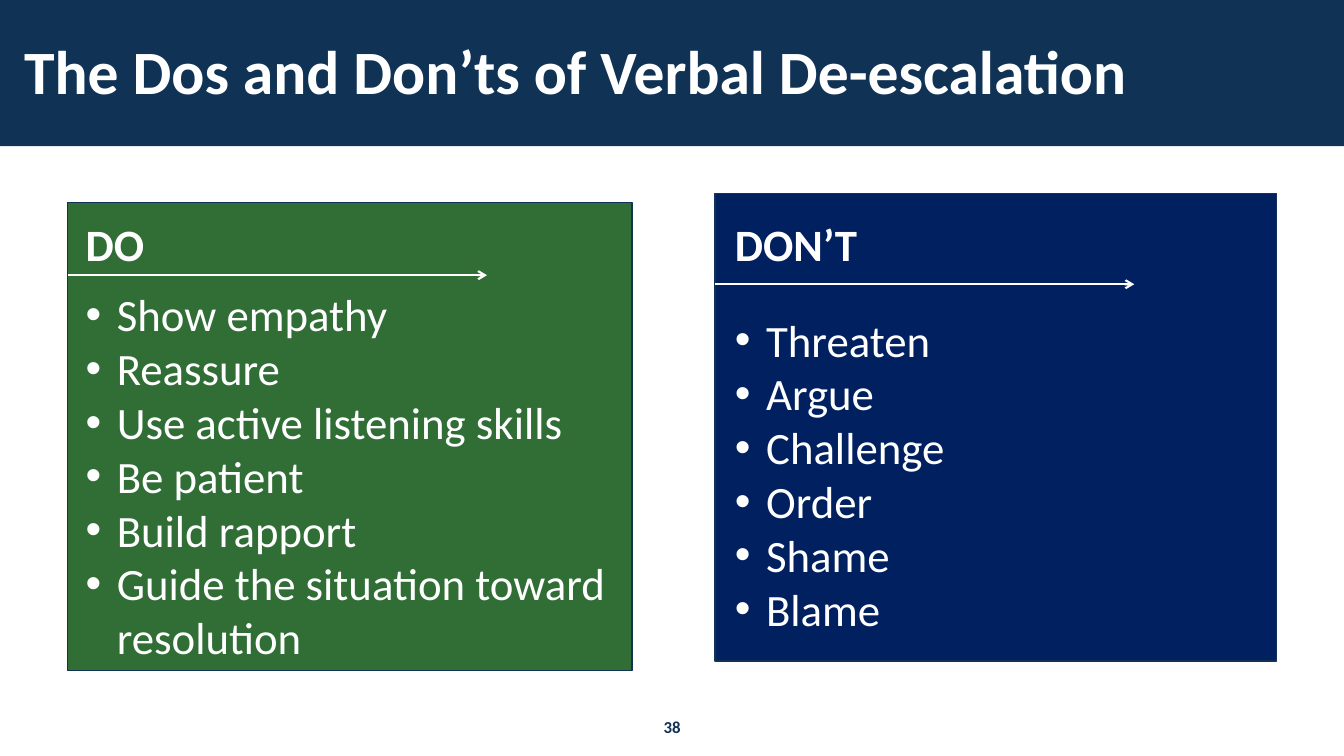
import pptx
import pptx.util
import pptx.dml.color
import pptx.enum.shapes
import pptx.enum.text
import pptx.oxml
import pptx.oxml.ns
from pptx.util import Inches, Pt

NAVY = pptx.dml.color.RGBColor(0x10, 0x32, 0x55)
BLUE = pptx.dml.color.RGBColor(0x00, 0x20, 0x60)
GREEN = pptx.dml.color.RGBColor(0x30, 0x6E, 0x36)
WHITE = pptx.dml.color.RGBColor(0xFF, 0xFF, 0xFF)

WIDTH, HEIGHT = 13.33, 7.5
BANNER_HEIGHT = 1.45
RULE_LENGTH = 4.16
TEXT_TOP = 2.1
BULLET_INDENT = 0.31

DOS = ["Show empathy", "Reassure", "Use active listening skills", "Be patient",
       "Build rapport", "Guide the situation toward resolution"]
DONTS = ["Threaten", "Argue", "Challenge", "Order", "Shame", "Blame"]


def add_span(para, text, size, color, bold):
    span = para.add_run()
    span.text = text
    span.font.name = "Calibri"
    span.font.size = Pt(size)
    span.font.bold = bold
    span.font.color.rgb = color


def add_text_box(page, left, top, width, height):
    box = page.shapes.add_textbox(Inches(left), Inches(top), Inches(width), Inches(height))
    box.text_frame.word_wrap = True
    return box.text_frame


def add_rectangle(page, left, top, width, height, fill):
    rectangle = page.shapes.add_shape(
        pptx.enum.shapes.MSO_SHAPE.RECTANGLE,
        Inches(left), Inches(top), Inches(width), Inches(height))
    rectangle.shadow.inherit = False
    rectangle.fill.solid()
    rectangle.fill.fore_color.rgb = fill
    return rectangle


def add_element(parent, tag, **attributes):
    element = pptx.oxml.parse_xml(f"<{tag} {pptx.oxml.ns.nsdecls('a')}/>")
    for name, value in attributes.items():
        element.set(name, value)
    parent.append(element)


def add_bullet(para):
    properties = para._p.get_or_add_pPr()
    properties.set("marL", str(Inches(BULLET_INDENT)))
    properties.set("indent", str(-Inches(BULLET_INDENT)))
    add_element(properties, "a:buFont", typeface="Arial")
    add_element(properties, "a:buChar", char="•")


def add_arrow(page, left, top, length):
    arrow = page.shapes.add_connector(
        pptx.enum.shapes.MSO_CONNECTOR.STRAIGHT,
        Inches(left), Inches(top), Inches(left + length), Inches(top))
    arrow.line.color.rgb = WHITE
    arrow.line.width = Pt(1.5)
    add_element(arrow.line._get_or_add_ln(), "a:tailEnd", type="arrow")
    add_element(arrow._element.spPr, "a:effectLst")


def add_banner(page, width, height, text):
    banner = add_rectangle(page, 0, 0, width, height, NAVY)
    banner.line.fill.background()
    page.shapes.element.insert(2, banner.element)
    title = page.shapes.title
    title.left, title.top = Inches(0.14), Inches(0.4)
    title.width, title.height = Inches(11.53), Inches(0.67)
    frame = title.text_frame
    frame.word_wrap = True
    frame.vertical_anchor = pptx.enum.text.MSO_ANCHOR.MIDDLE
    para = frame.paragraphs[0]
    para.alignment = pptx.enum.text.PP_ALIGN.LEFT
    para.line_spacing = 0.9
    add_span(para, text, 44, WHITE, True)


def add_panel(page, left, top, width, height, fill, rule_drop, text_shift, heading, gap, items):
    panel = add_rectangle(page, left, top, width, height, fill)
    panel.line.color.rgb = NAVY
    panel.line.width = Pt(1)
    add_arrow(page, left, top + rule_drop, RULE_LENGTH)
    frame = add_text_box(page, left + text_shift, TEXT_TOP, 5.68, 0.76)
    para = frame.paragraphs[0]
    para.space_after = Pt(gap)
    add_span(para, heading, 32, WHITE, True)
    for item in items:
        para = frame.add_paragraph()
        add_bullet(para)
        add_span(para, item, 32, WHITE, False)


def add_page_number(page, left, top, width, height, number):
    para = add_text_box(page, left, top, width, height).paragraphs[0]
    para.alignment = pptx.enum.text.PP_ALIGN.CENTER
    add_span(para, number, 12, NAVY, True)


def main():
    deck = pptx.Presentation()
    deck.slide_width, deck.slide_height = Inches(WIDTH), Inches(HEIGHT)
    page = deck.slides.add_slide(deck.slide_layouts[5])
    add_banner(page, WIDTH, BANNER_HEIGHT, "The Dos and Don’ts of Verbal De-escalation")
    add_panel(page, 7.09, 1.92, 5.57, 4.64, BLUE, 0.9, 0.1, "DON’T", 30, DONTS)
    add_panel(page, 0.67, 2.01, 5.6, 4.64, GREEN, 0.72, 0.08, "DO", 12, DOS)
    add_page_number(page, 6.09, 7.06, 1.15, 0.3, "38")
    deck.save("out.pptx")


if __name__ == "__main__":
    main()
